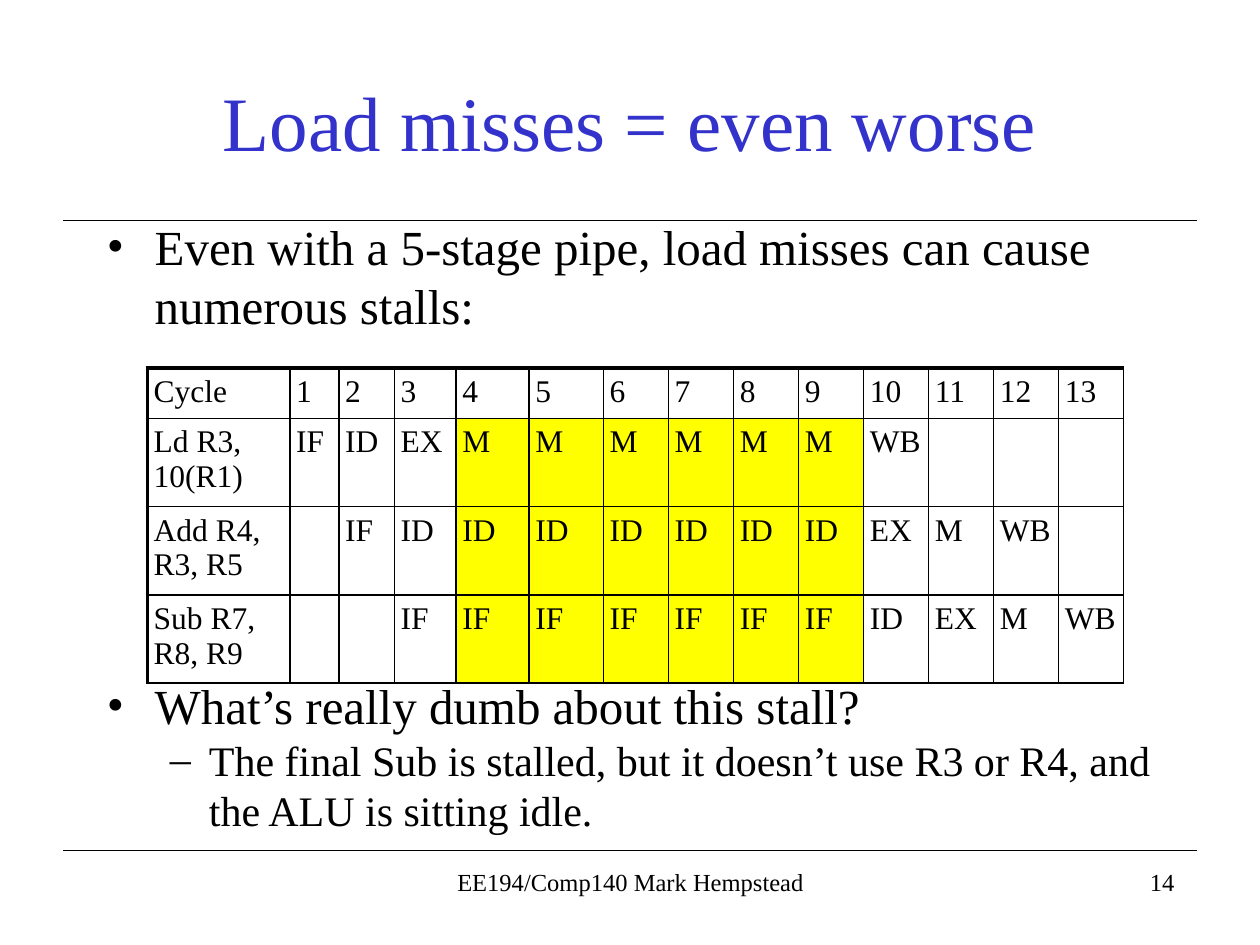
from dataclasses import dataclass

import pptx
import pptx.dml.color
import pptx.enum.shapes
import pptx.enum.text
import pptx.oxml
import pptx.oxml.ns
import pptx.util

Inches = pptx.util.Inches
Pt = pptx.util.Pt
ALIGN = pptx.enum.text.PP_ALIGN
ANCHOR = pptx.enum.text.MSO_ANCHOR


@dataclass(frozen=True)
class Theme:
    """Colours, type sizes and line widths of the deck."""
    font: str = "Times New Roman"
    ink: str = "000000"
    title_ink: str = "3333CC"
    stall_fill: str = "FFFF00"
    title_size: float = 44
    bullet_size: float = 28
    dash_size: float = 24
    table_size: float = 18
    footer_size: float = 14
    rule_width: float = 0.75
    grid_width: float = 1
    edge_width: float = 2.25


THEME = Theme()
STALL_CYCLES = range(4, 10)
PIPELINE = [
    ["Cycle"] + [str(cycle) for cycle in range(1, 14)],
    ["Ld R3, 10(R1)", "IF", "ID", "EX"] + ["M"] * 6 + ["WB", "", "", ""],
    ["Add R4, R3, R5", "", "IF", "ID"] + ["ID"] * 6 + ["EX", "M", "WB", ""],
    ["Sub R7, R8, R9", "", "", "IF"] + ["IF"] * 6 + ["ID", "EX", "M", "WB"],
]
FIRST_COLUMNS = [1.13, 0.39, 0.44, 0.49, 0.58, 0.59]
ROW_HEIGHTS = [0.4, 0.4, 0.42, 0.42]


def style_paragraph(paragraph, size, color=THEME.ink):
    """Set the font of every run in a paragraph."""
    for span in paragraph.runs:
        span.font.name = THEME.font
        span.font.size = Pt(size)
        span.font.color.rgb = pptx.dml.color.RGBColor.from_string(color)


def add_xml(parent, markup):
    """Append a drawing element written as markup to a parent element."""
    name, rest = markup.split(" ", 1)
    namespace = pptx.oxml.ns.nsdecls("a")
    parent.append(pptx.oxml.parse_xml(f"<a:{name} {namespace} {rest}"))


def add_text(page, box, text, size, align, color=THEME.ink, anchor=ANCHOR.TOP):
    """Place one line of text in a box."""
    frame = page.shapes.add_textbox(*map(Inches, box)).text_frame
    frame.word_wrap = True
    frame.vertical_anchor = anchor
    frame.text = text
    frame.paragraphs[0].alignment = align
    style_paragraph(frame.paragraphs[0], size, color)


def add_rule(page, left, top, width):
    """Draw a thin horizontal rule."""
    rule = page.shapes.add_connector(
        pptx.enum.shapes.MSO_CONNECTOR.STRAIGHT,
        Inches(left), Inches(top), Inches(left + width), Inches(top))
    rule.line.width = Pt(THEME.rule_width)
    rule.line.color.rgb = pptx.dml.color.RGBColor.from_string(THEME.ink)
    add_xml(rule.element.spPr, "effectLst />")


def add_bullet(paragraph, text, mark, size, indent, hang, space_before):
    """Write a bulleted paragraph with a hanging indent."""
    paragraph.text = text
    paragraph.space_before = Pt(space_before)
    style_paragraph(paragraph, size)
    properties = paragraph._p.get_or_add_pPr()
    properties.set("marL", str(Inches(indent)))
    properties.set("indent", str(-Inches(hang)))
    add_xml(properties, f'buFont typeface="{THEME.font}"/>')
    add_xml(properties, f'buChar char="{mark}"/>')


def add_body(page, box):
    """Place the bullets, leaving room for the table between the first two."""
    frame = page.shapes.add_textbox(*map(Inches, box)).text_frame
    frame.word_wrap = True
    add_bullet(frame.paragraphs[0],
               "Even with a 5-stage pipe, load misses can cause numerous stalls:",
               "•", THEME.bullet_size, 0.38, 0.38, 0)
    add_bullet(frame.add_paragraph(), "What’s really dumb about this stall?",
               "•", THEME.bullet_size, 0.38, 0.38, 195)
    dash = frame.add_paragraph()
    dash.level = 1
    add_bullet(dash, "The final Sub is stalled, but it doesn’t use R3 or R4, "
               "and the ALU is sitting idle.",
               "–", THEME.dash_size, 0.81, 0.31, 0)


def set_borders(cell, widths):
    """Give a cell its left, right, top and bottom borders."""
    properties = cell._tc.get_or_add_tcPr()
    for side, width in zip("LRTB", widths):
        add_xml(properties, f'ln{side} w="{Pt(width)}"><a:solidFill>'
                f'<a:srgbClr val="{THEME.ink}"/></a:solidFill></a:ln{side}>')


def fill_cell(cell, text, row, column):
    """Write one pipeline stage and style its cell."""
    cell.margin_left = cell.margin_right = Inches(0.05)
    cell.margin_top = cell.margin_bottom = Inches(0.05)
    cell.text = text
    style_paragraph(cell.text_frame.paragraphs[0], THEME.table_size)
    left = THEME.grid_width if column else THEME.edge_width
    top = THEME.grid_width if row else THEME.edge_width
    set_borders(cell, [left, THEME.grid_width, top, THEME.grid_width])
    if row and column in STALL_CYCLES:
        cell.fill.solid()
        cell.fill.fore_color.rgb = pptx.dml.color.RGBColor.from_string(
            THEME.stall_fill)
    else:
        cell.fill.background()


def add_pipeline(page, left, top, width):
    """Place the pipeline table, sharing the spare width among later cycles."""
    columns = len(PIPELINE[0])
    table = page.shapes.add_table(
        len(PIPELINE), columns, Inches(left), Inches(top),
        Inches(width), Inches(sum(ROW_HEIGHTS))).table
    table.first_row = table.horz_banding = False
    rest = columns - len(FIRST_COLUMNS)
    shared = (width - sum(FIRST_COLUMNS)) / rest
    for column, size in zip(table.columns, FIRST_COLUMNS + [shared] * rest):
        column.width = Inches(size)
    for row, height in enumerate(ROW_HEIGHTS):
        table.rows[row].height = Inches(height)
        for column, text in enumerate(PIPELINE[row]):
            fill_cell(table.cell(row, column), text, row, column)


def build_page(deck):
    """Compose the slide on load misses."""
    page = deck.slides.add_slide(deck.slide_layouts[6])
    for top in (6.75, 1.75):
        add_rule(page, 0.5, top, 9)
    add_text(page, (6.25, 6.83, 3.17, 0.5), "14", THEME.footer_size, ALIGN.RIGHT)
    add_text(page, (0.75, 0.33, 8.5, 1.25), "Load misses = even worse",
             THEME.title_size, ALIGN.CENTER, THEME.title_ink, ANCHOR.MIDDLE)
    add_body(page, (0.75, 1.67, 8.5, 1.17))
    add_text(page, (3.42, 6.83, 3.17, 0.5), "EE194/Comp140 Mark Hempstead",
             THEME.footer_size, ALIGN.CENTER)
    add_pipeline(page, 1.17, 2.92, 7.75)


def main():
    """Build and save the deck."""
    deck = pptx.Presentation()
    deck.slide_width, deck.slide_height = Inches(10), Inches(7.5)
    build_page(deck)
    deck.save("out.pptx")


if __name__ == "__main__":
    main()
